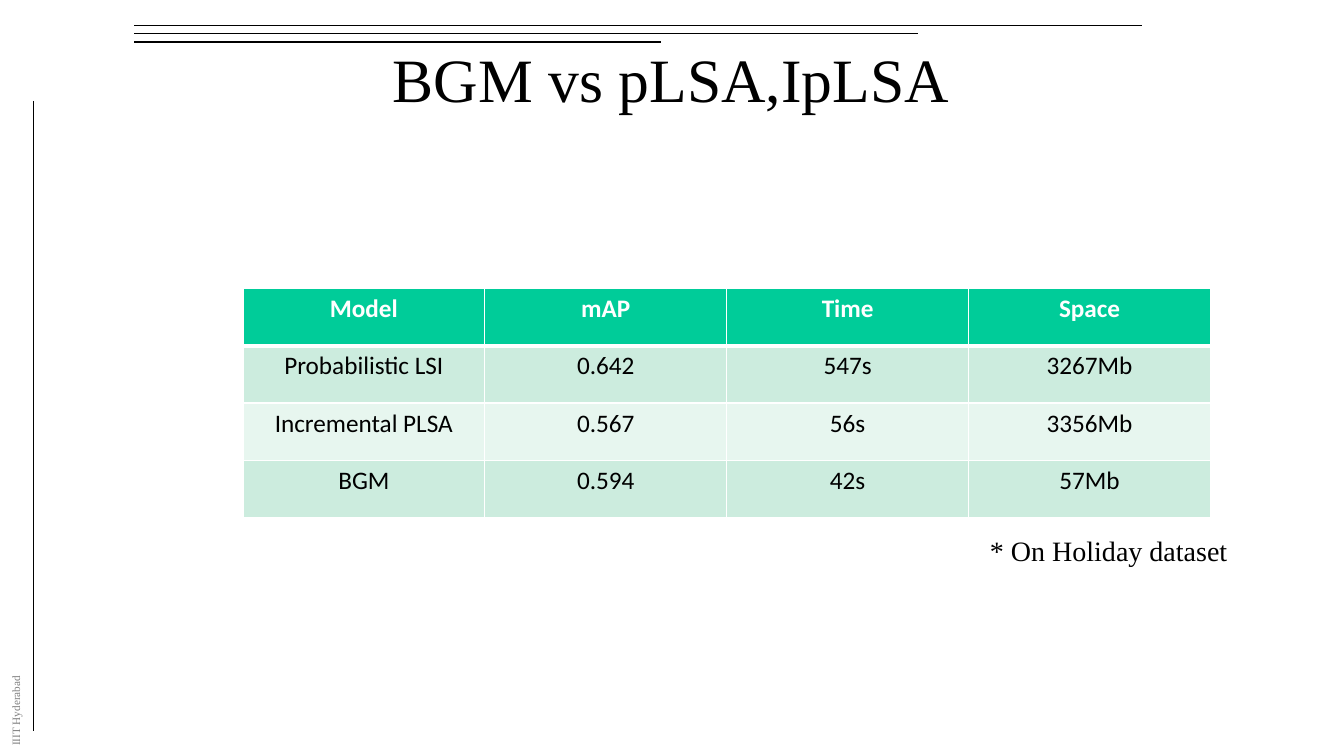
from dataclasses import dataclass
from lxml.etree import SubElement
from pptx import Presentation
from pptx.dml.color import RGBColor
from pptx.enum.shapes import MSO_CONNECTOR
from pptx.enum.text import MSO_ANCHOR, PP_ALIGN
from pptx.oxml import parse_xml
from pptx.oxml.ns import nsdecls, qn
from pptx.util import Inches, Pt


@dataclass(frozen=True)
class Theme:
    serif: str = "Times New Roman"
    sans: str = "Calibri"
    ink: str = "000000"
    grey: str = "808080"
    white: str = "FFFFFF"
    head: str = "00CC99"
    bands: tuple = ("CCECDE", "E7F6EF")
    title: int = 44
    note: int = 20
    body: int = 18
    small: int = 8


THEME = Theme()
WIDTH, HEIGHT = Inches(13.33), Inches(7.5)
UNIT = WIDTH / 40  # square grid, 40 columns across the slide

# Rules of the frame: start and end in grid columns and rows
RULES = [
    (4, 0.75, 34, 0.75),
    (4, 1, 27.33, 1),
    (4, 1.25, 19.67, 1.25),
    (1, 3, 1, 21.75),
]
RESULTS = [
    ("Model", "mAP", "Time", "Space"),
    ("Probabilistic LSI", "0.642", "547s", "3267Mb"),
    ("Incremental PLSA", "0.567", "56s", "3356Mb"),
    ("BGM", "0.594", "42s", "57Mb"),
]


def grid(*units):
    return [round(u * UNIT) for u in units]


def write(frame, text, size, font=THEME.serif, color=THEME.ink, bold=False,
          align=PP_ALIGN.LEFT, space=None):
    par = frame.paragraphs[0]
    par.alignment = align
    par.line_spacing = space
    run = par.add_run()
    run.text = text
    run.font.size = Pt(size)
    run.font.name = font
    run.font.bold = bold
    run.font.color.rgb = RGBColor.from_string(color)


def rule(slide, *ends):
    line = slide.shapes.add_connector(MSO_CONNECTOR.STRAIGHT, *grid(*ends))
    line.line.width = Pt(0.75)
    line.line.color.rgb = RGBColor.from_string(THEME.ink)
    SubElement(line._element.spPr, qn("a:effectLst"))


def label(slide, text, area, size, color=THEME.ink, turn=0, wrap=True):
    box = slide.shapes.add_textbox(*grid(*area))
    box.rotation = turn
    box.text_frame.word_wrap = wrap
    write(box.text_frame, text, size, color=color)
    return box.text_frame


def heading(slide, text, area):
    title = slide.shapes.title
    title.left, title.top, title.width, title.height = grid(*area)
    title.text_frame.vertical_anchor = MSO_ANCHOR.MIDDLE
    write(title.text_frame, text, THEME.title, align=PP_ALIGN.CENTER, space=0.63)


def border(cell, top, base):
    props = cell._tc.get_or_add_tcPr()
    sides = {"lnL": 1, "lnR": 1, "lnT": top, "lnB": base}
    for spot, (side, width) in enumerate(sides.items()):
        props.insert(spot, parse_xml(
            f'<a:{side} {nsdecls("a")} w="{Pt(width)}"><a:solidFill>'
            f'<a:srgbClr val="{THEME.white}"/></a:solidFill></a:{side}>'))


def table(slide, rows, area):
    shape = slide.shapes.add_table(len(rows), len(rows[0]), *grid(*area))
    shape.table.horz_banding = False
    for r, row in enumerate(rows):
        top = r == 0
        shade = THEME.head if top else THEME.bands[(r - 1) % 2]
        for c, text in enumerate(row):
            cell = shape.table.cell(r, c)
            cell.fill.solid()
            cell.fill.fore_color.rgb = RGBColor.from_string(shade)
            border(cell, 3 if r == 1 else 1, 3 if top else 1)
            write(cell.text_frame, text, THEME.body, font=THEME.sans, bold=top,
                  color=THEME.white if top else THEME.ink, align=PP_ALIGN.CENTER)


def main():
    deck = Presentation()
    deck.slide_width, deck.slide_height = WIDTH, HEIGHT
    slide = deck.slides.add_slide(deck.slide_layouts[5])

    # Frame
    for ends in RULES:
        rule(slide, *ends)
    label(slide, "IIIT Hyderabad", (-0.9, 20.76, 2.76, 0.72), THEME.small,
          color=THEME.grey, turn=270, wrap=False)

    # Title and results
    heading(slide, "BGM vs pLSA,IpLSA", (3, 0.78, 33.96, 3.72))
    table(slide, RESULTS, (7.23, 8.58, 28.8, 6.84))

    # Note under the table
    note = label(slide, "* On Holiday dataset", (27.66, 14.7, 12.33, 2.19), THEME.note)
    note.vertical_anchor = MSO_ANCHOR.BOTTOM
    note.margin_left, note.margin_bottom = Inches(0.6), 0

    deck.save("out.pptx")


if __name__ == "__main__":
    main()
